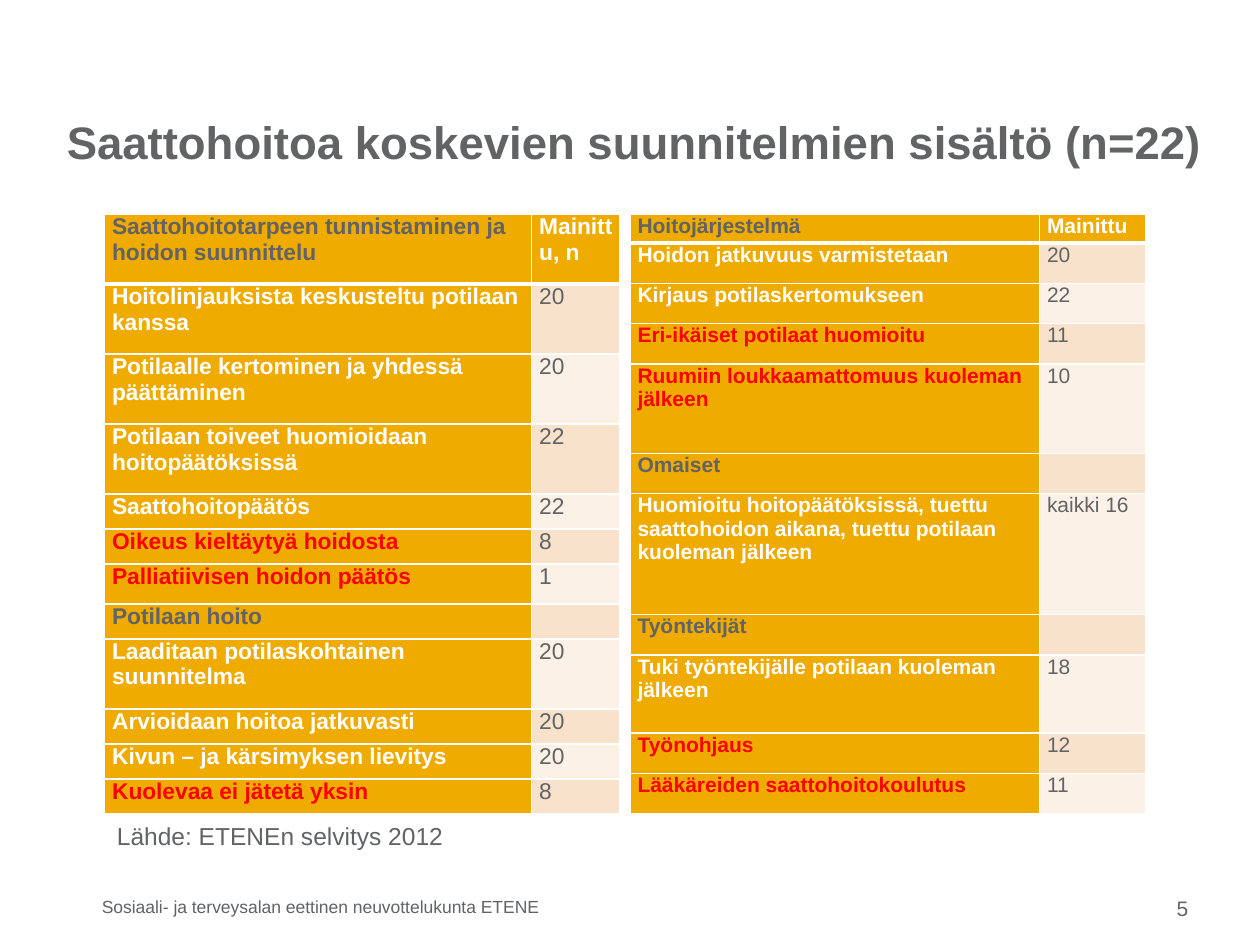
from dataclasses import dataclass
from lxml.etree import SubElement as Sub
from pptx import Presentation
from pptx.dml.color import RGBColor as Rgb
from pptx.enum.text import MSO_ANCHOR as Anchor, PP_ALIGN as Align
from pptx.oxml.ns import qn
from pptx.util import Inches, Pt

HUES = {
    "text": "616365",
    "white": "FFFFFF",
    "rare": "FF0000",
    "gold": "F0AB00",
    "dark": "F9E2CC",
    "pale": "FCF1E7",
}
FACE = "Arial"


@dataclass
class Row:
    high: float
    label: str
    count: str
    hue: str = "white"


@dataclass
class Grid:
    left: float
    cols: tuple[float, float]
    size: int
    rows: list[Row]


@dataclass
class Note:
    left: float
    top: float
    wide: float
    high: float
    text: str
    size: int
    align: Align = Align.LEFT


TOP, HIGH = 1.7, 4.76

GRIDS = [
    Grid(0.83, (3.39, 0.7), 13, [
        Row(0.56, "Saattohoitotarpeen tunnistaminen ja hoidon suunnittelu", "Mainittu, n", "text"),
        Row(0.56, "Hoitolinjauksista keskusteltu potilaan kanssa", "20"),
        Row(0.56, "Potilaalle kertominen ja yhdessä päättäminen", "20"),
        Row(0.56, "Potilaan toiveet huomioidaan hoitopäätöksissä", "22"),
        Row(0.28, "Saattohoitopäätös", "22"),
        Row(0.28, "Oikeus kieltäytyä hoidosta", "8", "rare"),
        Row(0.32, "Palliatiivisen hoidon päätös", "1", "rare"),
        Row(0.28, "Potilaan hoito", "", "text"),
        Row(0.56, "Laaditaan potilaskohtainen suunnitelma", "20"),
        Row(0.28, "Arvioidaan hoitoa jatkuvasti", "20"),
        Row(0.28, "Kivun – ja kärsimyksen lievitys", "20"),
        Row(0.28, "Kuolevaa ei jätetä yksin", "8", "rare"),
    ]),
    Grid(5, (3.25, 0.84), 12, [
        Row(0.23, "Hoitojärjestelmä", "Mainittu", "text"),
        Row(0.32, "Hoidon jatkuvuus varmistetaan", "20"),
        Row(0.32, "Kirjaus potilaskertomukseen", "22"),
        Row(0.32, "Eri-ikäiset potilaat huomioitu", "11", "rare"),
        Row(0.71, "Ruumiin loukkaamattomuus kuoleman jälkeen", "10", "rare"),
        Row(0.32, "Omaiset", "", "text"),
        Row(0.96, "Huomioitu hoitopäätöksissä, tuettu saattohoidon aikana, "
                  "tuettu potilaan kuoleman jälkeen", "kaikki 16"),
        Row(0.32, "Työntekijät", "", "text"),
        Row(0.62, "Tuki työntekijälle potilaan kuoleman jälkeen", "18"),
        Row(0.32, "Työnohjaus", "12", "rare"),
        Row(0.32, "Lääkäreiden saattohoitokoulutus", "11", "rare"),
    ]),
]

NOTES = [
    Note(0.83, 6.47, 3.74, 0.34, "Lähde: ETENEn selvitys 2012", 14),
    Note(0.71, 7.06, 4.13, 0.28, "Sosiaali- ja terveysalan eettinen neuvottelukunta ETENE", 10),
    Note(7.76, 7.06, 1.77, 0.3, "5", 12, Align.RIGHT),
]


def style(para, size: int, hue: str, bold: bool = False) -> None:
    font = para.font
    font.name, font.size, font.bold = FACE, Pt(size), bold
    font.color.rgb = Rgb.from_string(HUES[hue])


def edge(cell, side: str, width: float) -> None:
    line = Sub(cell._tc.get_or_add_tcPr(), qn(f"a:ln{side}"), w=str(Pt(width)))
    fill = Sub(line, qn("a:solidFill"))
    Sub(fill, qn("a:srgbClr"), val=HUES["white"])


def fill_cell(cell, text: str, size: int, hue: str, bold: bool, back: str, row: int) -> None:
    cell.margin_left = cell.margin_right = Inches(0.06)
    cell.margin_top = cell.margin_bottom = 0
    for side in "LRTB":
        thick = (row, side) in ((0, "B"), (1, "T"))
        edge(cell, side, 3 if thick else 1)
    cell.fill.solid()
    cell.fill.fore_color.rgb = Rgb.from_string(HUES[back])
    para = cell.text_frame.paragraphs[0]
    if text:
        para.text = text
    else:
        Sub(para._p, qn("a:endParaRPr"), sz=str(size * 100))
    style(para, size, hue, bold)


def draw_grid(slide, grid: Grid) -> None:
    frame = slide.shapes.add_table(
        len(grid.rows), 2, Inches(grid.left), Inches(TOP),
        Inches(sum(grid.cols)), Inches(HIGH))
    table = frame.table
    for col, wide in zip(table.columns, grid.cols):
        col.width = Inches(wide)
    scale = HIGH / sum(row.high for row in grid.rows)
    for i, row in enumerate(grid.rows):
        table.rows[i].height = Inches(row.high * scale)
        head = i == 0
        back = "gold" if head else "dark" if i % 2 else "pale"
        fill_cell(table.cell(i, 0), row.label, grid.size, row.hue, True, "gold", i)
        fill_cell(table.cell(i, 1), row.count, grid.size,
                  "white" if head else "text", head, back, i)


def draw_note(slide, note: Note) -> None:
    box = slide.shapes.add_textbox(
        Inches(note.left), Inches(note.top), Inches(note.wide), Inches(note.high))
    box.text_frame.word_wrap = True
    para = box.text_frame.paragraphs[0]
    para.text = note.text
    para.alignment = note.align
    style(para, note.size, "text")


def draw_title(slide, text: str) -> None:
    title = slide.shapes.title
    title.left, title.top = Inches(0.43), Inches(0.8)
    title.width, title.height = Inches(9.37), Inches(0.59)
    title.text_frame.vertical_anchor = Anchor.BOTTOM
    para = title.text_frame.paragraphs[0]
    para.text = text
    para.alignment = Align.LEFT
    style(para, 26, "text", True)


def main() -> None:
    deck = Presentation()
    deck.slide_width, deck.slide_height = Inches(10), Inches(7.5)
    slide = deck.slides.add_slide(deck.slide_layouts[5])
    draw_title(slide, "Saattohoitoa koskevien suunnitelmien sisältö (n=22)")
    for grid in GRIDS:
        draw_grid(slide, grid)
    for note in NOTES:
        draw_note(slide, note)
    deck.save("out.pptx")


if __name__ == "__main__":
    main()
